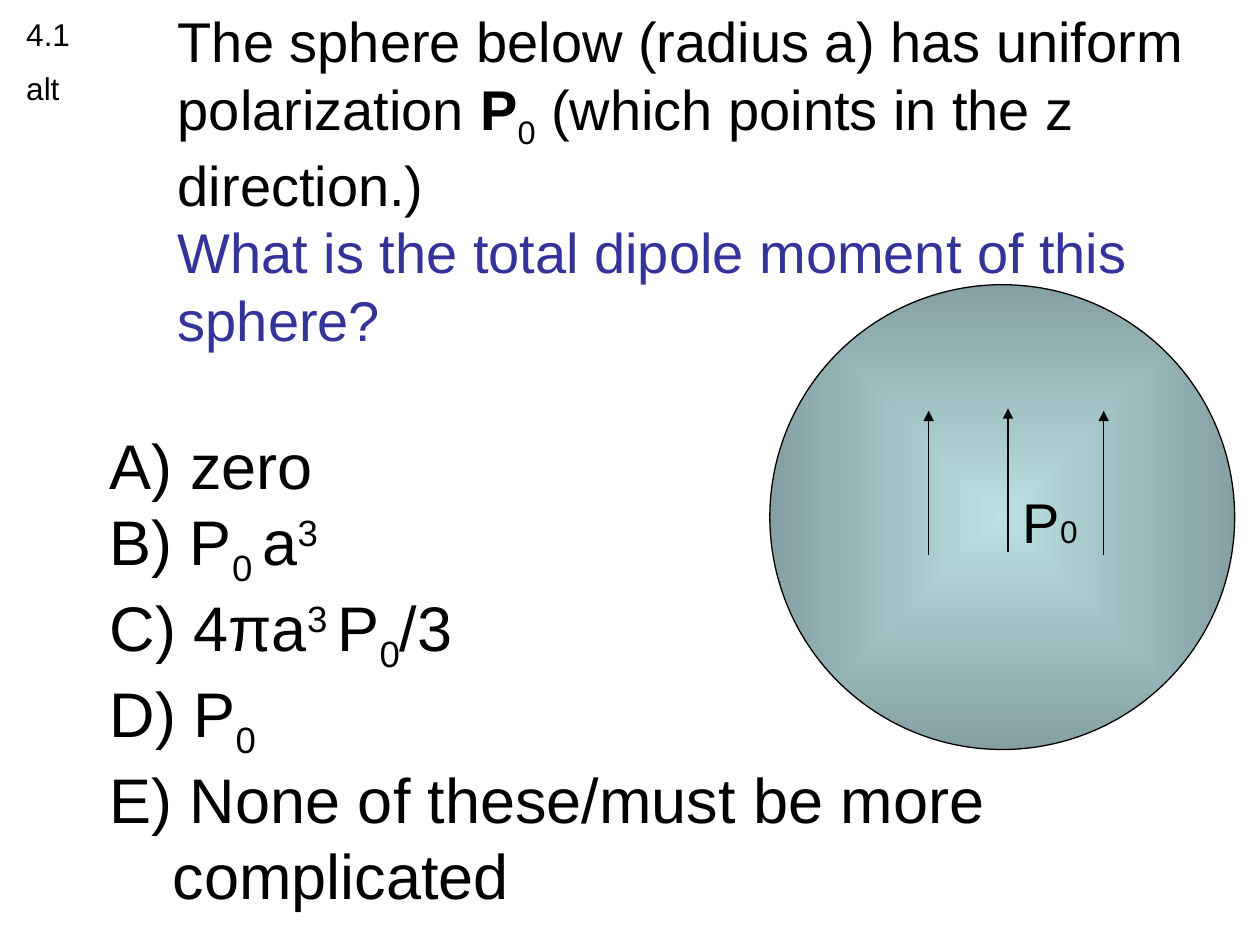
from dataclasses import dataclass

from lxml.etree import SubElement
from pptx import Presentation
from pptx.dml.color import RGBColor
from pptx.enum.shapes import MSO_CONNECTOR, MSO_SHAPE
from pptx.enum.text import MSO_ANCHOR, MSO_AUTO_SIZE, PP_ALIGN
from pptx.oxml import parse_xml
from pptx.oxml.ns import nsdecls, qn
from pptx.util import Cm, Pt

COLORS = {"text": "000000", "question": "333399", "sphere": "BBE0E3"}
SUB, SUP = -25, 30


@dataclass
class Span:
    text: str
    baseline: int = 0
    bold: bool = False
    color: str = "text"
    size: float | None = None


@dataclass
class Arrow:
    x: float
    bottom: float
    top: float


QUESTION = [
    Span("The sphere below (radius a) has uniform polarization "),
    Span("P", bold=True),
    Span("0", SUB),
    Span(" (which points in the z direction.) "),
]
ANSWERS = [
    [Span(" zero")],
    [Span("B) P"), Span("0 ", SUB), Span("a"), Span("3", SUP)],
    [Span("C) 4πa"), Span("3 ", SUP), Span("P"), Span("0", SUB), Span("/3")],
    [Span("D) P"), Span("0", SUB)],
    [Span("E) None of these/must be more complicated")],
]
ARROWS = [Arrow(18.72, 11.18, 8.28), Arrow(20.32, 11.13, 8.23), Arrow(22.25, 11.18, 8.28)]


def rgb(name: str) -> RGBColor:
    return RGBColor.from_string(COLORS[name])


def write(p, spans: list[Span], size: float) -> None:
    p.font.name = "Arial"
    p.font.size = Pt(size)
    for span in spans:
        r = p.add_run()
        r.text = span.text
        r.font.color.rgb = rgb(span.color)
        if span.bold:
            r.font.bold = True
        if span.size:
            r.font.size = Pt(span.size)
        if span.baseline:
            r.font._element.set("baseline", str(span.baseline * 1000))


def add_text(shapes, box: tuple, lines: list[list[Span]], size: float, wrap: bool = True):
    tf = shapes.add_textbox(*map(Cm, box)).text_frame
    tf.word_wrap = wrap
    tf.auto_size = MSO_AUTO_SIZE.SHAPE_TO_FIT_TEXT
    for i, spans in enumerate(lines):
        p = tf.paragraphs[0] if i == 0 else tf.add_paragraph()
        write(p, spans, size)
    return tf


def add_title(slide) -> None:
    sp = slide.shapes.title
    sp.left, sp.top, sp.width, sp.height = map(Cm, (3.33, 2.03, 21.56, 3.18))
    tf = sp.text_frame
    tf.auto_size = MSO_AUTO_SIZE.NONE
    tf.vertical_anchor = MSO_ANCHOR.MIDDLE
    p = tf.paragraphs[0]
    p.alignment = PP_ALIGN.LEFT
    write(p, QUESTION, 32)
    p.add_line_break()
    write(p, [Span("What is the total dipole moment of this sphere?", color="question")], 32)


def add_answers(slide) -> None:
    tf = add_text(slide.shapes, (1.96, 8.48, 20.09, 9.4), ANSWERS, 36)
    for i, p in enumerate(tf.paragraphs):
        pPr = p._p.get_or_add_pPr()
        pPr.set("marL", str(Cm(1.27)))
        pPr.set("indent", str(-Cm(1.27)))
        if i == 0:
            bullet = parse_xml(f'<a:buAutoNum {nsdecls("a")} type="alphaUcParenR"/>')
            pPr.insert_element_before(bullet, "a:tabLst", "a:defRPr", "a:extLst")


def add_sphere(shapes) -> None:
    d = Cm(9.37)
    sp = shapes.add_shape(MSO_SHAPE.OVAL, Cm(15.52), Cm(5.74), d, d)
    sp.shadow.inherit = False
    sp.line.color.rgb = rgb("text")
    sp.line.width = Pt(0.75)
    sp.fill.gradient()
    grad = sp._element.spPr.find(qn("a:gradFill"))
    color = COLORS["sphere"]
    grad.getparent().replace(grad, parse_xml(
        f'<a:gradFill {nsdecls("a")} rotWithShape="1"><a:gsLst>'
        f'<a:gs pos="0"><a:srgbClr val="{color}"/></a:gs>'
        f'<a:gs pos="100000"><a:srgbClr val="{color}"><a:shade val="46275"/></a:srgbClr></a:gs>'
        '</a:gsLst><a:path path="shape">'
        '<a:fillToRect l="50000" t="50000" r="50000" b="50000"/></a:path></a:gradFill>'))


def add_arrow(shapes, arrow: Arrow) -> None:
    x = Cm(arrow.x)
    line = shapes.add_connector(MSO_CONNECTOR.STRAIGHT, x, Cm(arrow.bottom), x, Cm(arrow.top))
    line.line.color.rgb = rgb("text")
    line.line.width = Pt(0.75)
    SubElement(line.line._get_or_add_ln(), qn("a:tailEnd"), type="triangle")
    SubElement(line._element.spPr, qn("a:effectLst"))


def main() -> None:
    prs = Presentation()
    prs.slide_width, prs.slide_height = Cm(25.4), Cm(19.05)
    slide = prs.slides.add_slide(prs.slide_layouts[5])
    add_title(slide)
    add_answers(slide)
    label = add_text(slide.shapes, (0.28, 0.18, 2.21, 2.79), [[Span("4.1")], [Span("alt")]], 18)
    label.paragraphs[1].space_before = Pt(9)
    group = slide.shapes.add_group_shape().shapes
    add_sphere(group)
    for arrow in ARROWS:
        add_arrow(group, arrow)
    add_text(group, (20.37, 9.7, 1.73, 1.6), [[Span("P"), Span("0", size=18)]], 32, wrap=False)
    prs.save("out.pptx")


if __name__ == "__main__":
    main()
